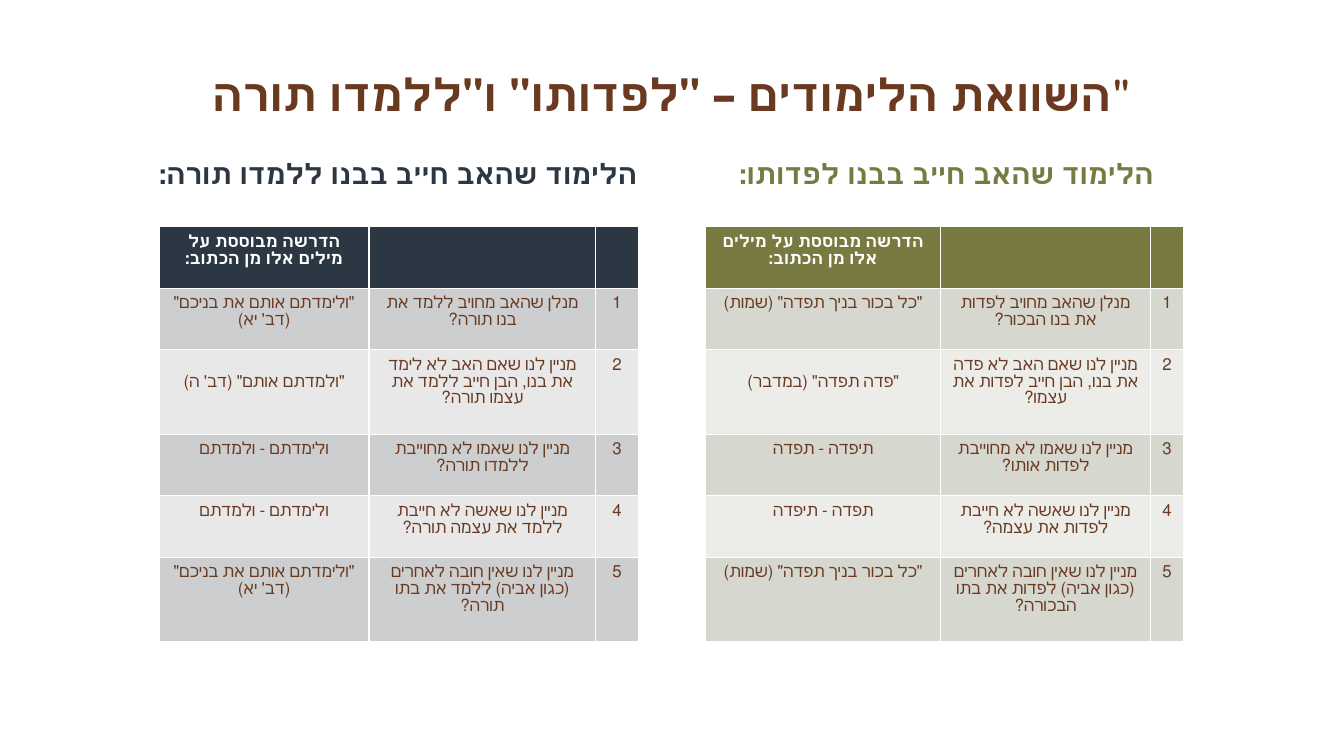
"""Build a slide comparing two derivations in a pair of Hebrew tables."""
from pptx import Presentation
from pptx.dml.color import RGBColor
from pptx.enum.text import MSO_ANCHOR as Anchor, MSO_AUTO_SIZE as AutoSize, PP_ALIGN as Align
from pptx.util import Inches, Pt

BROWN = RGBColor(0x6A, 0x3A, 0x20)
NAVY = RGBColor(0x2B, 0x37, 0x42)
OLIVE = RGBColor(0x78, 0x7A, 0x41)
GREY = RGBColor(0xCD, 0xCE, 0xCF)
PALE_GREY = RGBColor(0xE8, 0xE8, 0xE9)
SAND = RGBColor(0xD6, 0xD7, 0xCF)
PALE_SAND = RGBColor(0xEC, 0xEC, 0xE9)
WHITE = RGBColor(0xFF, 0xFF, 0xFF)

SOURCE_HEADER = "הדרשה מבוססת על מילים אלו מן הכתוב:"
ROW_HEIGHTS = [0.61, 0.61, 0.84, 0.61, 0.61, 0.84]
PADDING = 0.07
LINE_HEIGHT = 0.17

SIDES = [
    {
        "heading": "הלימוד שהאב חייב בבנו ללמדו תורה:",
        "slot": 1, "heading_left": 1.34, "table_left": 1.58,
        "columns": [2.08, 2.25, 0.42],
        "colour": NAVY, "bands": [GREY, PALE_GREY],
        "rows": [
            ("\"ולימדתם אותם את בניכם\" (דב' יא)", "מנלן שהאב מחויב ללמד את בנו תורה?"),
            ("\"ולמדתם אותם\" (דב' ה)", "מניין לנו שאם האב לא לימד את בנו, הבן חייב ללמד את עצמו תורה?"),
            ("ולימדתם - ולמדתם", "מניין לנו שאמו לא מחוייבת ללמדו תורה?"),
            ("ולימדתם - ולמדתם", "מניין לנו שאשה לא חייבת ללמד את עצמה תורה?"),
            ("\"ולימדתם אותם את בניכם\" (דב' יא)", "מניין לנו שאין חובה לאחרים (כגון אביה) ללמד את בתו תורה?"),
        ],
    },
    {
        "heading": "הלימוד שהאב חייב בבנו לפדותו:",
        "slot": 3, "heading_left": 6.78, "table_left": 7,
        "columns": [2.33, 2.08, 0.33],
        "colour": OLIVE, "bands": [SAND, PALE_SAND],
        "rows": [
            ("\"כל בכור בניך תפדה\" (שמות)", "מנלן שהאב מחויב לפדות את בנו הבכור?"),
            ("\"פדה תפדה\" (במדבר)", "מניין לנו שאם האב לא פדה את בנו, הבן חייב לפדות את עצמו?"),
            ("תיפדה - תפדה", "מניין לנו שאמו לא מחוייבת לפדות אותו?"),
            ("תפדה - תיפדה", "מניין לנו שאשה לא חייבת לפדות את עצמה?"),
            ("\"כל בכור בניך תפדה\" (שמות)", "מניין לנו שאין חובה לאחרים (כגון אביה) לפדות את בתו הבכורה?"),
        ],
    },
]


def write(frame, text, size=12, colour=BROWN, bold=False, font="Cambria", rtl=True, spacing=None):
    para = frame.paragraphs[0]
    para.alignment = Align.CENTER
    para.line_spacing = spacing
    if rtl:
        para._p.get_or_add_pPr().set("rtl", "1")
    span = para.add_run()
    span.text = text
    span.font.name = font
    span.font.size = Pt(size)
    span.font.bold = bold
    span.font.color.rgb = colour


def place(box, left, top, width, height, anchor):
    box.left, box.top = Inches(left), Inches(top)
    box.width, box.height = Inches(width), Inches(height)
    box.text_frame.word_wrap = True
    box.text_frame.auto_size = AutoSize.NONE
    box.text_frame.vertical_anchor = anchor


deck = Presentation()
deck.slide_width, deck.slide_height = Inches(13.33), Inches(7.5)
page = deck.slides.add_slide(deck.slide_layouts.get_by_name("Comparison"))

title = page.shapes.title
place(title, 1.33, 0.47, 10.66, 0.78, Anchor.BOTTOM)
write(title.text_frame, "השוואת הלימודים – \"לפדותו\" ו\"ללמדו תורה\"", size=32, bold=True, rtl=False)

for side in SIDES:
    heading = page.placeholders[side["slot"]]
    place(heading, side["heading_left"], 1.33, 5.22, 0.83, Anchor.MIDDLE)
    write(heading.text_frame, side["heading"], size=20, colour=side["colour"], bold=True, spacing=0.9)

    table = page.shapes.add_table(
        len(ROW_HEIGHTS), len(side["columns"]), Inches(side["table_left"]), Inches(2.25),
        Inches(sum(side["columns"])), Inches(sum(ROW_HEIGHTS))).table
    table.horz_banding = False
    for column, width in zip(table.columns, side["columns"]):
        column.width = Inches(width)
    for row, height in zip(table.rows, ROW_HEIGHTS):
        row.height = Inches(height)

    for column in range(len(side["columns"])):
        cell = table.cell(0, column)
        cell.fill.solid()
        cell.fill.fore_color.rgb = side["colour"]
    header = table.cell(0, 0)
    header.margin_left = header.margin_right = Inches(PADDING)
    header.margin_top = header.margin_bottom = Inches(PADDING)
    write(header.text_frame, SOURCE_HEADER, colour=WHITE, bold=True)

    for number, (verse, question) in enumerate(side["rows"], start=1):
        for column, text in enumerate([verse, question, str(number)]):
            cell = table.cell(number, column)
            cell.fill.solid()
            cell.fill.fore_color.rgb = side["bands"][(number - 1) % 2]
            cell.margin_left = cell.margin_right = Inches(PADDING)
            cell.margin_top = cell.margin_bottom = Inches(PADDING)
            write(cell.text_frame, text, font="Times New Roman" if column == 2 else "Cambria")
    table.cell(2, 0).margin_top = Inches(PADDING + LINE_HEIGHT)

for slot in (2, 4):
    empty = page.placeholders[slot].element
    empty.getparent().remove(empty)

deck.save("out.pptx")
